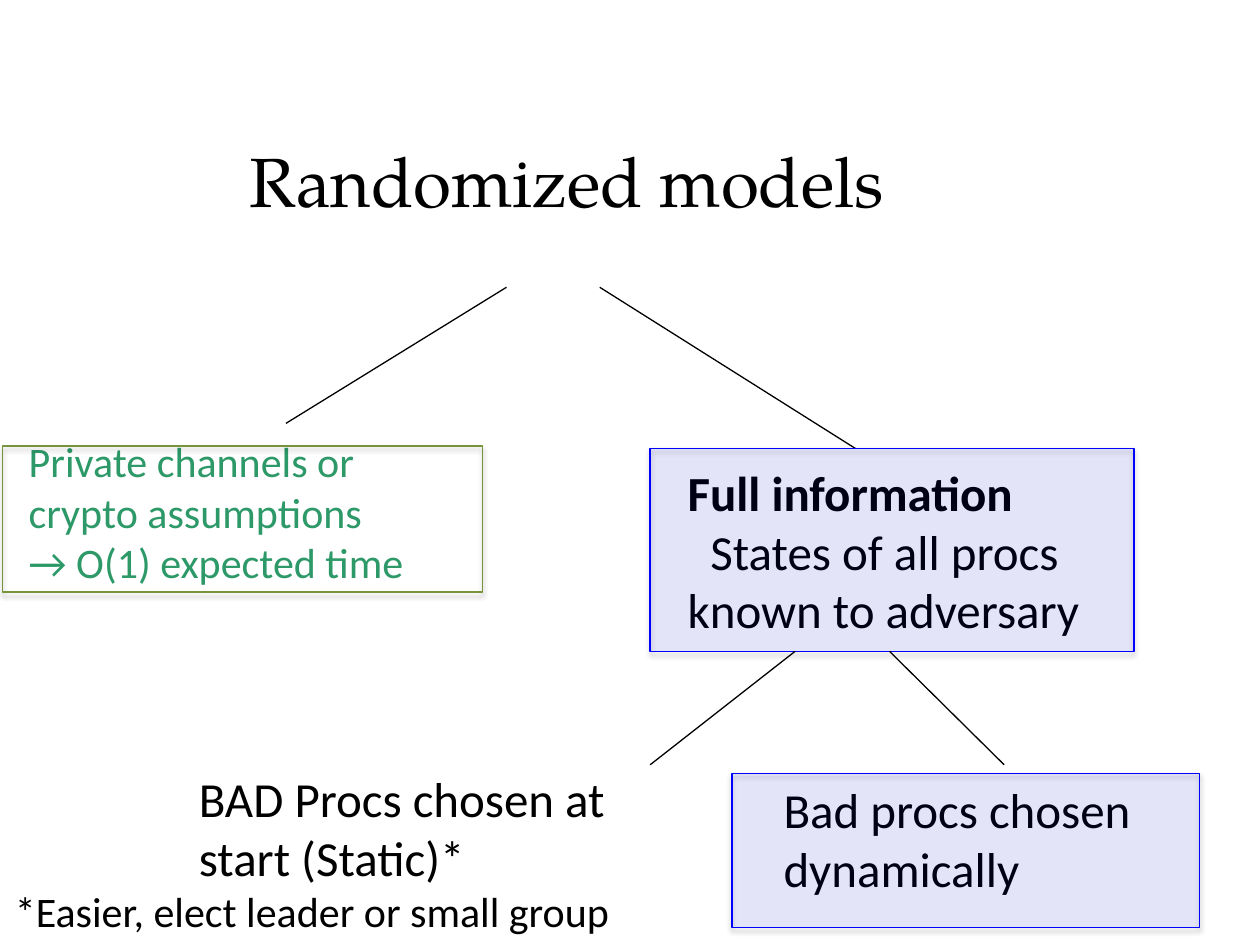
import pptx
import pptx.dml.color
import pptx.enum.shapes
import pptx.enum.text
import pptx.oxml
import pptx.oxml.ns
import pptx.util
from lxml import etree

Inches = pptx.util.Inches
Pt = pptx.util.Pt
RGBColor = pptx.dml.color.RGBColor
qn = pptx.oxml.ns.qn

BLACK = RGBColor(0x00, 0x00, 0x00)
GREEN = RGBColor(0x2D, 0x99, 0x68)
OLIVE = RGBColor(0x77, 0x93, 0x3C)
BLUE = RGBColor(0x00, 0x00, 0xFF)
SHADOW_XML = (
    f'<a:effectLst {pptx.oxml.ns.nsdecls("a")}>'
    f'<a:outerShdw blurRad="{Pt(3.1)}" dist="{Pt(1.8)}" dir="5400000" rotWithShape="0">'
    '<a:srgbClr val="000000"><a:alpha val="35000"/></a:srgbClr>'
    '</a:outerShdw></a:effectLst>'
)


def write(p, text, size=28, font="Calibri", color=BLACK, bold=False, indent=0):
    r = p.add_run()
    r.text = text
    r.font.size = Pt(size)
    r.font.name = font
    r.font.color.rgb = color
    r.font.bold = bold
    if indent:
        p._p.get_or_add_pPr().set("indent", str(Inches(indent)))


class TreeSlide:
    def __init__(self, prs):
        self.slide = prs.slides.add_slide(prs.slide_layouts[5])
        self.shapes = self.slide.shapes

    def title(self, text, left, top, width, height):
        sp = self.shapes.title
        sp.left, sp.top, sp.width, sp.height = map(Inches, (left, top, width, height))
        tf = sp.text_frame
        tf.auto_size = pptx.enum.text.MSO_AUTO_SIZE.NONE
        tf.vertical_anchor = pptx.enum.text.MSO_ANCHOR.BOTTOM
        tf.margin_bottom = 0
        p = tf.paragraphs[0]
        p.alignment = pptx.enum.text.PP_ALIGN.CENTER
        write(p, text, size=39.6, font="TeX Gyre Pagella")

    def text(self, lines, left, top, width, height, wrap=True, **style):
        """Add a text box; each line is a (text, own format) pair."""
        sp = self.shapes.add_textbox(*map(Inches, (left, top, width, height)))
        tf = sp.text_frame
        tf.word_wrap = wrap
        for i, (line, own) in enumerate(lines):
            p = tf.add_paragraph() if i else tf.paragraphs[0]
            write(p, line, **{**style, **own})

    def branch(self, x1, y1, x2, y2):
        line = self.shapes.add_connector(
            pptx.enum.shapes.MSO_CONNECTOR.STRAIGHT, *map(Inches, (x1, y1, x2, y2)))
        line.line.color.rgb = BLACK
        line.line.width = Pt(0.75)
        etree.SubElement(line._element.spPr, qn("a:effectLst"))

    def frame(self, left, top, width, height, color, tinted=True):
        """Add a shadowed rectangle that lies over its text."""
        sp = self.shapes.add_shape(
            pptx.enum.shapes.MSO_SHAPE.RECTANGLE, *map(Inches, (left, top, width, height)))
        sp.line.color.rgb = color
        sp.line.width = Pt(0.75)
        if tinted:
            sp.fill.solid()
            sp.fill.fore_color.rgb = color
            clr = sp._element.spPr.find(qn("a:solidFill")).find(qn("a:srgbClr"))
            etree.SubElement(clr, qn("a:alpha")).set("val", "8000")
        else:
            sp.fill.background()
        sp._element.spPr.append(pptx.oxml.parse_xml(SHADOW_XML))


def main():
    prs = pptx.Presentation()
    prs.slide_width, prs.slide_height = Inches(10), Inches(7.5)
    s = TreeSlide(prs)

    s.title("Randomized models", 0, 0.45, 9, 1.31)
    s.branch(4.02, 2.28, 2.27, 3.36)
    s.text([("Private channels or", {}),
            ("crypto assumptions", {}),
            ("→ O(1) expected time", {})],
           0.13, 3.41, 3.24, 1.72, wrap=False, size=24, color=GREEN)

    s.branch(4.76, 2.28, 6.79, 3.56)
    s.text([("Full information", {"bold": True}),
            ("States of all procs known to adversary", {"indent": 0.18})],
           5.36, 3.62, 3.64, 2.93)
    s.frame(5.16, 3.56, 3.84, 1.61, BLUE)
    s.frame(0.02, 3.54, 3.81, 1.16, OLIVE, tinted=False)

    s.branch(6.31, 5.17, 5.16, 6.07)
    s.branch(7.06, 5.17, 7.97, 6.07)
    s.text([("BAD Procs chosen at start (Static)*", {})], 1.48, 6.05, 3.68, 1.04)
    s.text([("Bad procs chosen dynamically", {})], 6.12, 6.14, 3.75, 1.04)
    s.frame(5.81, 6.14, 3.71, 1.22, BLUE)
    s.text([("*Easier, elect leader or small group", {})], 0.02, 6.98, 5.57, 0.5, size=24)

    prs.save("out.pptx")


if __name__ == "__main__":
    main()
